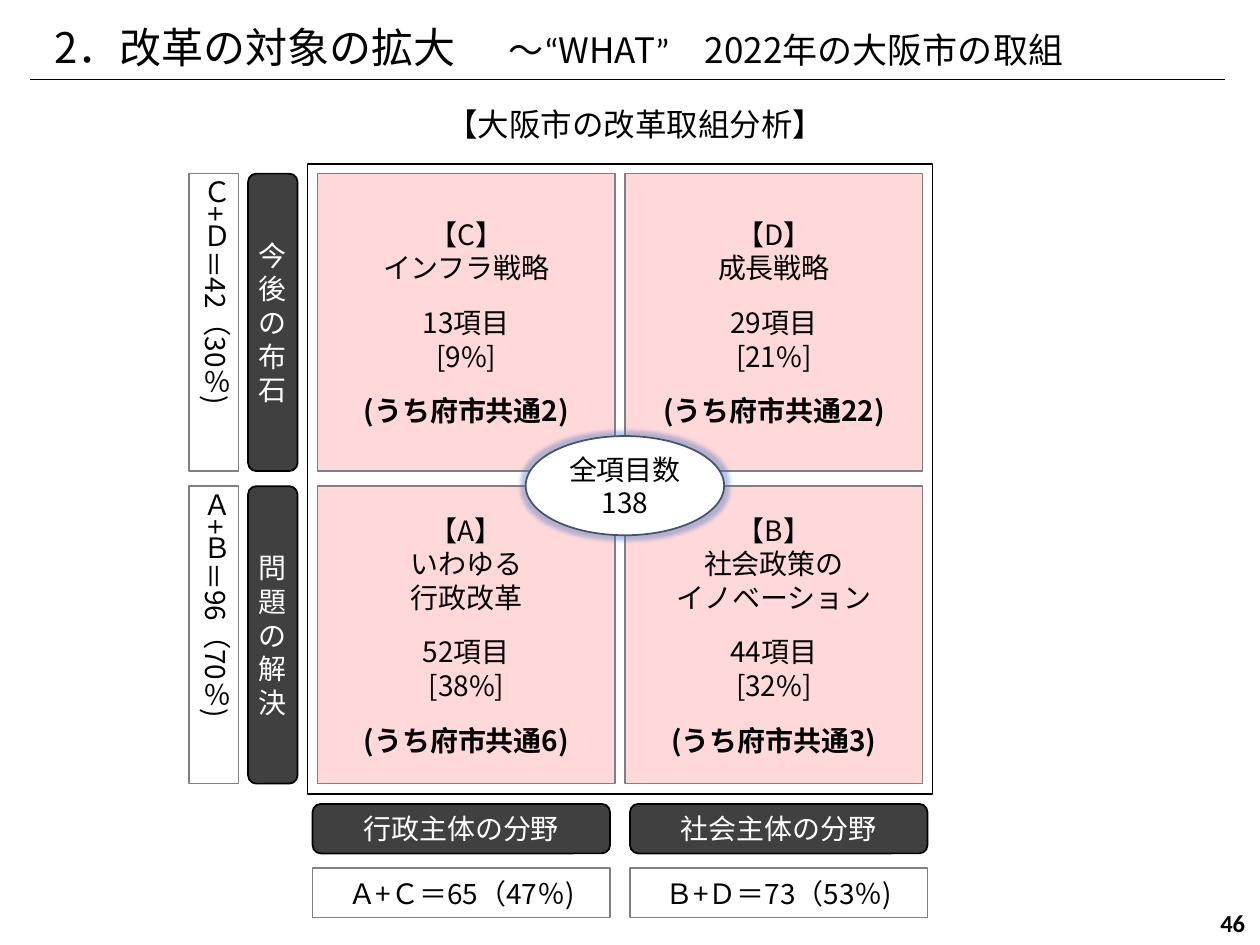
from dataclasses import dataclass

from lxml import etree
from pptx import Presentation
from pptx.dml.color import RGBColor
from pptx.enum.shapes import MSO_CONNECTOR, MSO_SHAPE as Shape
from pptx.enum.text import MSO_ANCHOR as Anchor, PP_ALIGN as Align
from pptx.oxml.ns import qn
from pptx.util import Pt


@dataclass(frozen=True)
class Theme:
    font: str = "Noto Sans CJK JP"
    narrow_font: str = "Calibri"
    ink: str = "000000"
    paper: str = "FFFFFF"
    pink: str = "FFD9D9"
    dark: str = "404040"
    gray: str = "808080"
    navy: str = "44546A"
    glow: str = "4472C4"
    title: int = 24
    title_gap: int = 28
    subtitle: int = 20
    heading: int = 18
    body: int = 16
    page: int = 14
    leading: float = 19.2
    title_leading: int = 33


theme = Theme()


def write(shape, lines, size=theme.body, color=theme.ink, align=Align.CENTER,
          anchor=Anchor.MIDDLE, wrap=False, leading=None, font=theme.font):
    """Fill a shape with one paragraph per line, in one common style."""
    frame = shape.text_frame
    frame.text = "\n".join(lines)
    frame.word_wrap = wrap
    frame.vertical_anchor = anchor
    frame.margin_left = frame.margin_right = Pt(2.88)
    frame.margin_top = frame.margin_bottom = Pt(2.88)
    for paragraph in frame.paragraphs:
        paragraph.alignment = align
        if leading:
            paragraph.line_spacing = Pt(leading)
        for run in paragraph.runs:
            run.font.size = Pt(size)
            run.font.name = font
            run.font.color.rgb = RGBColor.from_string(color)
            east_asian = etree.SubElement(run.font._element, qn("a:ea"))
            east_asian.set("typeface", font)
    return frame


def add_block(kind, left, top, width, height, line, fill=None, weight=1):
    block = slide.shapes.add_shape(kind, Pt(left), Pt(top), Pt(width), Pt(height))
    block.shadow.inherit = False
    block.line.color.rgb = RGBColor.from_string(line)
    block.line.width = Pt(weight)
    if fill:
        block.fill.solid()
        block.fill.fore_color.rgb = RGBColor.from_string(fill)
    else:
        block.fill.background()
    return block


deck = Presentation()
deck.slide_width, deck.slide_height = Pt(720), Pt(540)
slide = deck.slides.add_slide(deck.slide_layouts[6])

# Title and rule
title_rule = slide.shapes.add_connector(
    MSO_CONNECTOR.STRAIGHT, Pt(17.3), Pt(45.4), Pt(700), Pt(45.4))
title_rule.line.color.rgb = RGBColor.from_string(theme.ink)
title_rule.line.width = Pt(0.5)
etree.SubElement(title_rule._element.spPr, qn("a:effectLst"))

title = slide.shapes.add_textbox(Pt(28.3), Pt(5.8), Pt(683), Pt(34))
title_line = write(title, ["2．改革の対象の拡大　"], theme.title, align=Align.LEFT,
                   anchor=Anchor.TOP, wrap=True,
                   leading=theme.title_leading).paragraphs[0]
# Quotation marks take the narrow font so that they are not full width
subtitle_parts = [
    (" ", theme.title_gap, theme.font),
    ("～", theme.subtitle, theme.font),
    ("“", theme.subtitle, theme.narrow_font),
    ("WHAT", theme.subtitle, theme.font),
    ("”", theme.subtitle, theme.narrow_font),
    ("　2022年の大阪市の取組", theme.subtitle, theme.font),
]
for wording, size, font in subtitle_parts:
    run = title_line.add_run()
    run.text = wording
    run.font.size = Pt(size)
    run.font.name = font
    run.font.color.rgb = RGBColor.from_string(theme.ink)
    etree.SubElement(run.font._element, qn("a:ea")).set("typeface", font)

heading = slide.shapes.add_textbox(Pt(252), Pt(56.9), Pt(230), Pt(28.3))
write(heading, ["【大阪市の改革取組分析】"], theme.heading, align=Align.LEFT, wrap=True)

# Matrix: two fields across, two time frames down
side, bar = 170, 28.3
columns = (181.5, 357.2)
rows = (99.2, 277.8)
add_block(Shape.RECTANGLE, 175.7, 93.6, 357.2, 360, theme.ink)

quadrants = [
    (0, 0, ["【C】", "インフラ戦略"], ["13項目", "[9%]"], "(うち府市共通2)"),
    (1, 0, ["【D】", "成長戦略"], ["29項目", "[21%]"], "(うち府市共通22)"),
    (0, 1, ["【A】", "いわゆる", "行政改革"], ["52項目", "[38%]"], "(うち府市共通6)"),
    (1, 1, ["【B】", "社会政策の", "イノベーション"], ["44項目", "[32%]"], "(うち府市共通3)"),
]
for column, row, name, count, shared in quadrants:
    quadrant = add_block(Shape.RECTANGLE, columns[column], rows[row], side, side,
                         theme.gray, theme.pink)
    frame = write(quadrant, name + count + [shared], leading=theme.leading)
    count_line, shared_line = frame.paragraphs[len(name)], frame.paragraphs[-1]
    count_line.space_before = shared_line.space_before = Pt(12)
    shared_line.runs[0].font.bold = True

# Row labels and row totals
time_frames = [
    (["今後", "の", "布石"], "Ｃ+Ｄ＝42（30％)"),
    (["問", "題の解決"], "Ａ+Ｂ＝96（70％)"),
]
for top, (label, total) in zip(rows, time_frames):
    row_label = add_block(Shape.ROUNDED_RECTANGLE, 141.8, top, bar, side,
                          theme.ink, theme.dark)
    write(row_label, label, color=theme.paper, wrap=True, leading=theme.leading)
    row_total = add_block(Shape.RECTANGLE, 108, top, bar, side, theme.gray, weight=0.75)
    frame = write(row_total, [total], anchor=Anchor.TOP)
    frame._txBody.bodyPr.set("vert", "eaVert")

# Column labels and column totals
fields = [
    (178.6, "行政主体の分野", "Ａ+Ｃ＝65（47％)"),
    (360, "社会主体の分野", "Ｂ+Ｄ＝73（53％)"),
]
for left, label, total in fields:
    column_label = add_block(Shape.ROUNDED_RECTANGLE, left, 459.4, side, bar,
                             theme.ink, theme.dark)
    write(column_label, [label], color=theme.paper)
    column_total = add_block(Shape.RECTANGLE, left, 496.1, side, bar,
                             theme.gray, weight=0.75)
    write(column_total, [total])

# Grand total with a soft glow
grand_total = add_block(Shape.OVAL, 300.4, 249.2, 113.4, 56.7, theme.navy, theme.paper)
write(grand_total, ["全項目数", "138"], leading=theme.leading)
effects = grand_total._element.spPr.find(qn("a:effectLst"))
glow = etree.SubElement(effects, qn("a:glow"), rad=str(Pt(5)))
glow_color = etree.SubElement(glow, qn("a:srgbClr"), val=theme.glow)
etree.SubElement(glow_color, qn("a:alpha"), val="40000")

page_number = slide.shapes.add_textbox(Pt(680.4), Pt(516.2), Pt(34), Pt(22.3))
page_frame = write(page_number, ["46"], theme.page, align=Align.RIGHT, wrap=True,
                   font=theme.narrow_font)
page_frame.paragraphs[0].runs[0].font.bold = True

deck.save("out.pptx")
